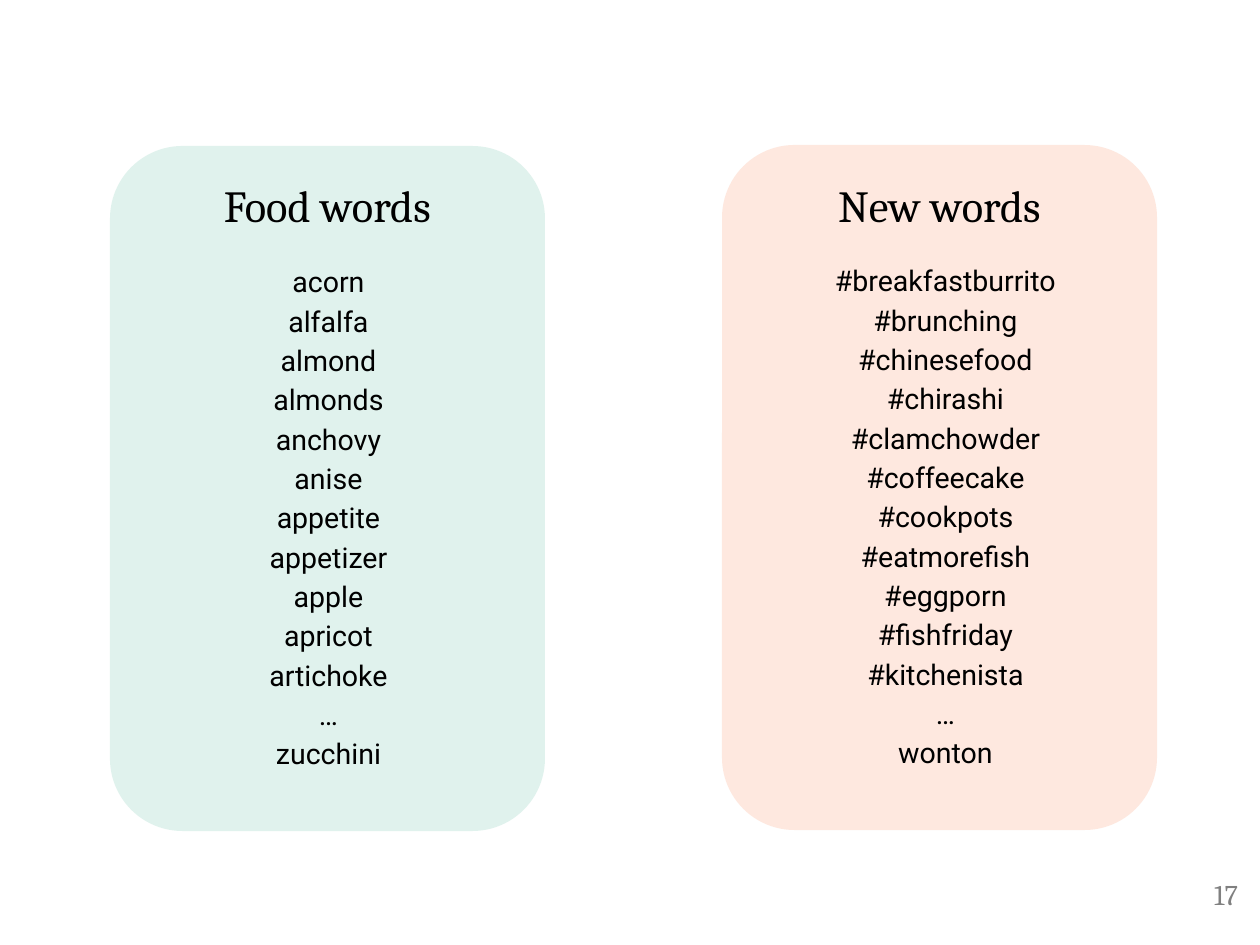
from lxml import etree
from pptx import Presentation
from pptx import util as u
from pptx.dml.color import RGBColor
from pptx.enum import shapes, text
from pptx.oxml.ns import qn

PX = 914400 / 126
INK = {"mint": "66C2A5", "coral": "FC8D62", "black": "000000", "gray": "808080"}


def px(*vals):
    return [u.Emu(round(v * PX)) for v in vals]


def write(box, lines, at, size, font="Cambria", ink="black", align="CENTER",
          anchor="TOP", lead=1.0):
    box.left, box.top, box.width, box.height = px(*at)
    frame = box.text_frame
    frame.word_wrap = True
    frame.auto_size = text.MSO_AUTO_SIZE.NONE
    frame.vertical_anchor = getattr(text.MSO_ANCHOR, anchor)
    frame.margin_left, frame.margin_top, frame.margin_right, frame.margin_bottom = px(11, 5, 11, 5)
    frame.text = "\n".join(lines)
    for para in frame.paragraphs:
        para.alignment = getattr(text.PP_ALIGN, align)
        para.line_spacing = lead
        para.space_before = para.space_after = u.Pt(0)
        props = para._p.get_or_add_pPr()
        props.set("marL", "0")
        props.set("indent", "0")
        etree.SubElement(props, qn("a:buNone"))
        face = para.runs[0].font
        face.name, face.size, face.bold = font, u.Pt(size), False
        face.color.rgb = RGBColor.from_string(INK[ink])


deck = Presentation()
deck.slide_width, deck.slide_height = px(1260, 945)
slide = deck.slides.add_slide(deck.slide_layouts[4])  # Comparison
title = slide.shapes.title._element
title.getparent().remove(title)

food = ["acorn", "alfalfa", "almond", "almonds", "anchovy", "anise", "appetite",
        "appetizer", "apple", "apricot", "artichoke", "…", "zucchini"]
new = ["#breakfastburrito", "#brunching", "#chinesefood", "#chirashi",
       "#clamchowder", "#coffeecake", "#cookpots", "#eatmorefish", "#eggporn",
       "#fishfriday", "#kitchenista", "…", "wonton"]

# Heading, words, tint, card left, card top, list left, placeholder index
cols = [("Food words", food, "mint", 110, 146, 163, 1),
        ("New words", new, "coral", 722, 145, 780, 3)]

for head, words, tint, left, top, inner, idx in cols:
    card = slide.shapes.add_shape(shapes.MSO_SHAPE.ROUNDED_RECTANGLE,
                                  *px(left, top, 435, 685))
    card.shadow.inherit = False
    card.line.fill.background()
    card.fill.solid()
    card.fill.fore_color.rgb = RGBColor.from_string(INK[tint])
    color = card._element.spPr.find(".//" + qn("a:srgbClr"))
    etree.SubElement(color, qn("a:alpha"), val="20000")
    slide.shapes._spTree.insert(2, card._element)  # behind the text

    write(slide.placeholders[idx], [head], (left, 173, 435, 63), 25.4)
    write(slide.placeholders[idx + 1], words, (inner, top + 49, 331, 640), 16.3,
          font="Roboto", anchor="MIDDLE", lead=1.15)

page = slide.shapes.add_textbox(0, 0, 0, 0)
write(page, ["17"], (1100, 872, 149, 53), 16.3, ink="gray", align="RIGHT")

deck.save("out.pptx")
